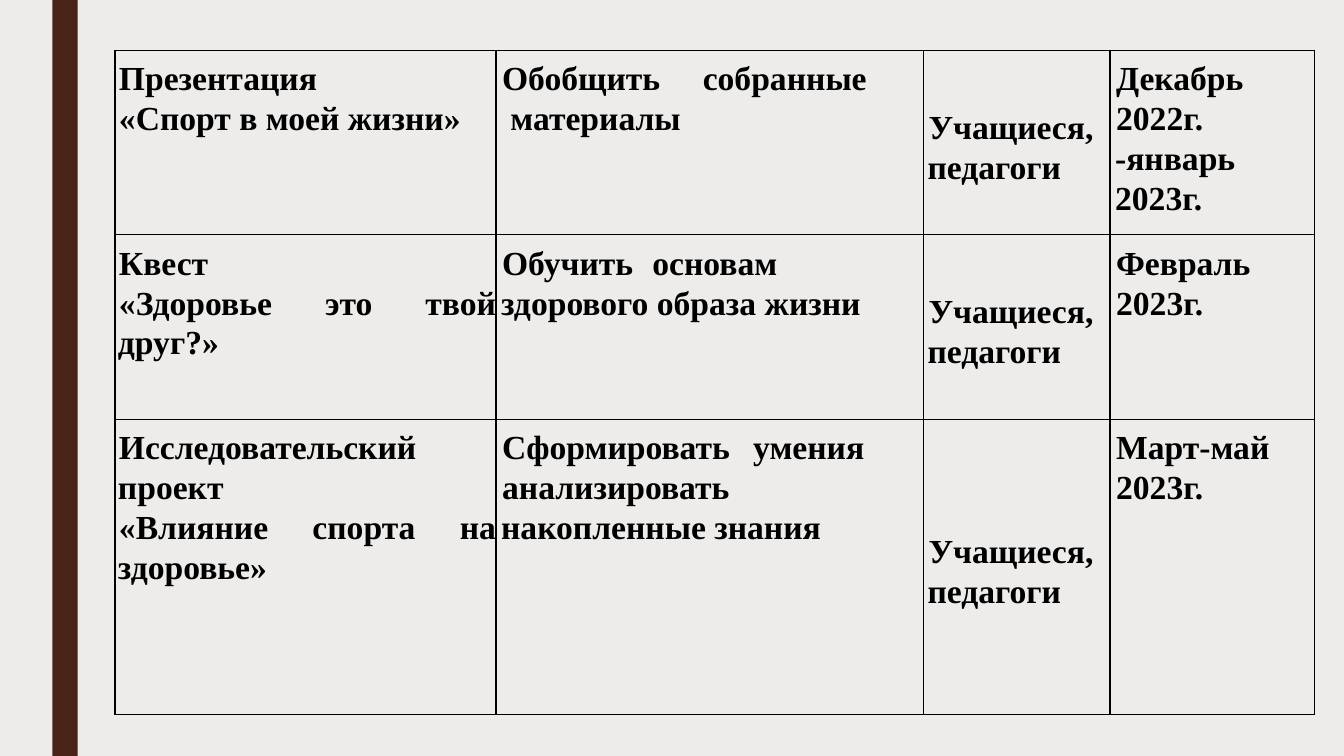
from lxml.etree import SubElement
from pptx import Presentation
from pptx.dml.color import RGBColor
from pptx.enum.shapes import MSO_SHAPE as Shape
from pptx.enum.text import MSO_ANCHOR as Anchor, PP_ALIGN as Align
from pptx.oxml import parse_xml
from pptx.oxml.ns import nsdecls, qn
from pptx.util import Inches, Pt

# Content: each cell is a list of paragraphs
PEOPLE = ["Учащиеся, педагоги"]
ROWS = [
    [["Презентация", "«Спорт в моей жизни»"],
     ["Обобщить\tсобранные", " материалы"],
     PEOPLE,
     ["Декабрь", "2022г. -январь 2023г."]],
    [["Квест", "«Здоровье это твой друг?»"],
     ["Обучить\tосновам здорового образа жизни"],
     PEOPLE,
     ["Февраль", "2023г."]],
    [["Исследовательский проект", "«Влияние спорта на здоровье»"],
     ["Сформировать\tумения", "анализировать накопленные знания"],
     PEOPLE,
     ["Март-май", "2023г."]],
]

# Layout and formats, in inches and points
COLUMN_WIDTHS = [3.78, 4.24, 1.85, 2.03]
ROW_HEIGHTS = [1.83, 1.83, 2.93]
COLUMN_INDENTS = [0, 0.02, 0.01, 0.02]
GOAL_COLUMN, PEOPLE_COLUMN = 1, 2
BACKGROUND, BAR, INK = "EDECEB", "4A2318", "000000"
CELL_FORMAT = {"margin_left": Inches(0.03), "margin_top": Inches(0.08),
               "margin_right": 0, "margin_bottom": 0}
FONT_FORMAT = {"name": "Times New Roman", "size": Pt(24), "bold": True}


def paint(fill, color):
    fill.solid()
    fill.fore_color.rgb = RGBColor.from_string(color)


def apply(target, values):
    for name, value in values.items():
        setattr(target, name, value)


def add_borders(cell):
    properties = cell._tc.get_or_add_tcPr()
    for position, side in enumerate(("lnL", "lnR", "lnT", "lnB")):
        line = parse_xml(f'<a:{side} {nsdecls("a")} w="{Pt(1)}"/>')
        fill = SubElement(line, qn("a:solidFill"))
        SubElement(fill, qn("a:srgbClr"), val=INK)
        properties.insert(position, line)


def fill_cell(cell, column, lines):
    apply(cell, CELL_FORMAT)
    cell.vertical_anchor = Anchor.MIDDLE if column == PEOPLE_COLUMN else Anchor.TOP
    cell.fill.background()
    add_borders(cell)
    frame = cell.text_frame
    for index, text in enumerate(lines):
        para = frame.add_paragraph() if index else frame.paragraphs[0]
        para.alignment = Align.LEFT if column == GOAL_COLUMN else Align.JUSTIFY
        para.line_spacing = 1.07
        indents = para._p.get_or_add_pPr()
        indents.set("marL", str(Inches(COLUMN_INDENTS[column])))
        indents.set("indent", str(Inches(0.01)))
        span = para.add_run()
        span.text = text
        apply(span.font, FONT_FORMAT)
        span.font.color.rgb = RGBColor.from_string(INK)


def main():
    deck = Presentation()
    deck.slide_width, deck.slide_height = Inches(13.33), Inches(7.5)
    page = deck.slides.add_slide(deck.slide_layouts[6])
    paint(page.background.fill, BACKGROUND)

    # Side bar
    bar = page.shapes.add_shape(Shape.RECTANGLE, Inches(0.52), 0,
                                Inches(0.25), deck.slide_height)
    bar.shadow.inherit = False
    bar.line.fill.background()
    paint(bar.fill, BAR)

    # Schedule table
    schedule = page.shapes.add_table(
        len(ROWS), len(COLUMN_WIDTHS), Inches(1.14), Inches(0.5),
        Inches(sum(COLUMN_WIDTHS)), Inches(sum(ROW_HEIGHTS))).table
    apply(schedule, {"first_row": False, "horz_banding": False})
    for column, width in zip(schedule.columns, COLUMN_WIDTHS):
        column.width = Inches(width)
    for row, height, cells in zip(schedule.rows, ROW_HEIGHTS, ROWS):
        row.height = Inches(height)
        for column, lines in enumerate(cells):
            fill_cell(row.cells[column], column, lines)

    deck.save("out.pptx")


if __name__ == "__main__":
    main()
